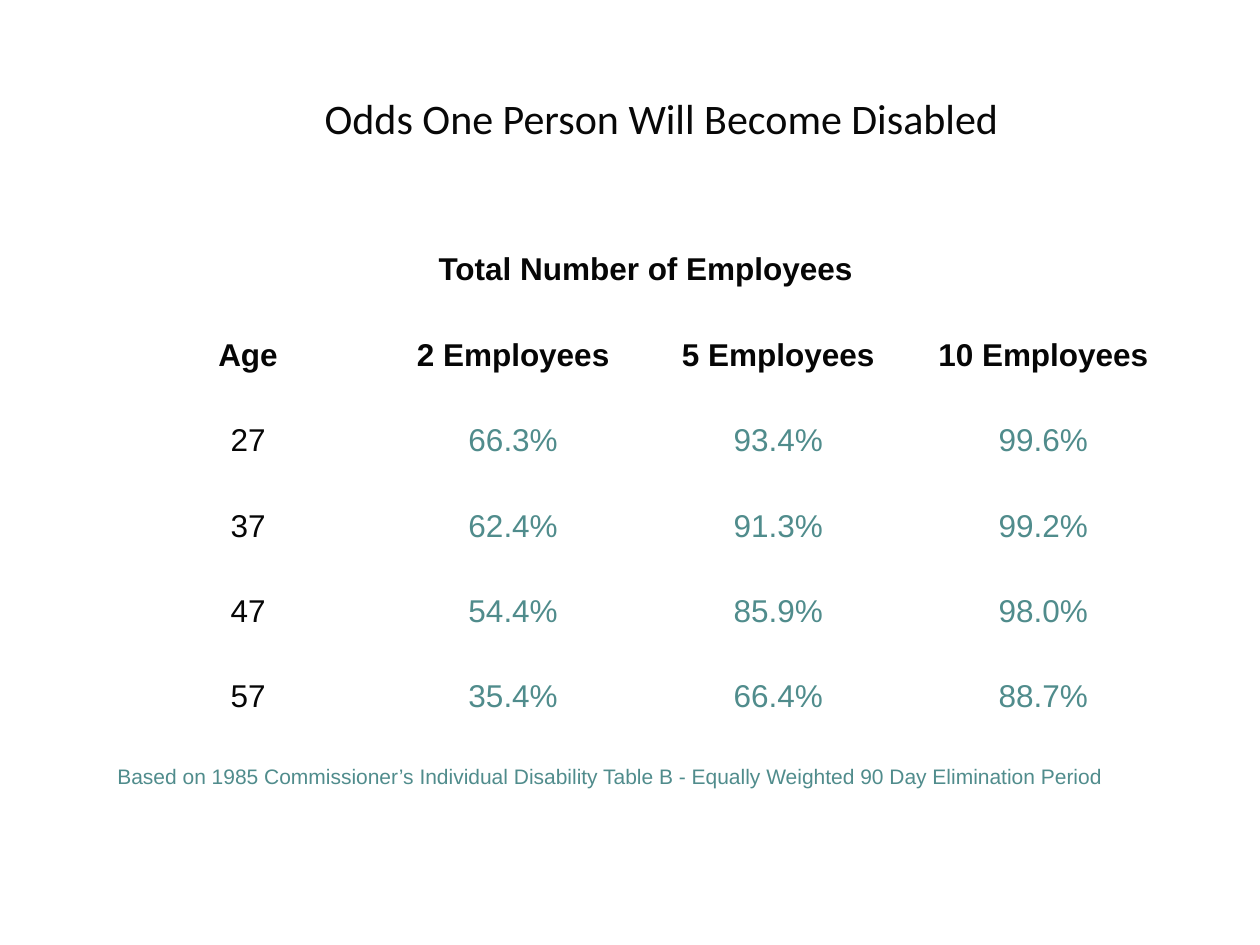
"""Build a slide tabulating the odds that one employee becomes disabled."""
from dataclasses import dataclass

from pptx import Presentation
from pptx.dml.color import RGBColor
from pptx.enum.text import MSO_ANCHOR, PP_ALIGN
from pptx.slide import Slide
from pptx.table import _Cell
from pptx.text.text import TextFrame
from pptx.util import Pt

LEFT, CENTER = PP_ALIGN.LEFT, PP_ALIGN.CENTER
TOP, MIDDLE = MSO_ANCHOR.TOP, MSO_ANCHOR.MIDDLE
TITLE_ONLY = 5
TEAL = "508C8C"
INK = "060606"


@dataclass(frozen=True)
class TextStyle:
    size: float
    color: str
    font: str = "Arial"
    bold: bool = False
    alignment: PP_ALIGN = CENTER
    line_spacing: float = 2.0


@dataclass(frozen=True)
class AgeOdds:
    age: str
    odds: tuple[str, ...]


TITLE = TextStyle(24, "080808", font="Calibri", line_spacing=1.0)
HEADER = TextStyle(18, INK, bold=True)
AGE = TextStyle(18, INK)
ODDS = TextStyle(18, TEAL)
NOTE = TextStyle(12, TEAL, alignment=LEFT, line_spacing=1.9)

HEADINGS = ("Age", "2 Employees", "5 Employees", "10 Employees")
AGE_ROWS = (
    AgeOdds("27", ("66.3%", "93.4%", "99.6%")),
    AgeOdds("37", ("62.4%", "91.3%", "99.2%")),
    AgeOdds("47", ("54.4%", "85.9%", "98.0%")),
    AgeOdds("57", ("35.4%", "66.4%", "88.7%")),
)
COLUMN_WIDTH = 151.5
ROW_HEIGHT = 48.75


def rgb(color: str) -> RGBColor:
    return RGBColor.from_string(color)


def write_text(frame: TextFrame, text: str, style: TextStyle) -> None:
    frame.word_wrap = True
    paragraph = frame.paragraphs[0]
    paragraph.text = text
    paragraph.alignment = style.alignment
    paragraph.line_spacing = style.line_spacing
    paragraph.font.size = Pt(style.size)
    paragraph.font.name = style.font
    paragraph.font.bold = style.bold
    paragraph.font.color.rgb = rgb(style.color)


def fill_cell(cell: _Cell, text: str, style: TextStyle,
              anchor: MSO_ANCHOR = MIDDLE) -> None:
    cell.fill.background()
    cell.vertical_anchor = anchor
    write_text(cell.text_frame, text, style)


def add_title(slide: Slide) -> None:
    title = slide.shapes.title
    title.left, title.top = Pt(66), Pt(24)
    title.width, title.height = Pt(624), Pt(86)
    title.text_frame.vertical_anchor = MIDDLE
    write_text(title.text_frame, "Odds One Person Will Become Disabled", TITLE)


def add_odds_table(slide: Slide) -> None:
    row_count, column_count = len(AGE_ROWS) + 2, len(HEADINGS)
    table = slide.shapes.add_table(
        row_count, column_count, Pt(66), Pt(120),
        Pt(COLUMN_WIDTH * column_count), Pt(ROW_HEIGHT * row_count)).table
    table.first_row = table.horz_banding = False
    table.cell(0, 0).merge(table.cell(0, column_count - 1))
    fill_cell(table.cell(0, 0), "Total Number of Employees", HEADER, TOP)
    for column, heading in enumerate(HEADINGS):
        fill_cell(table.cell(1, column), heading, HEADER)
    for row, entry in enumerate(AGE_ROWS, start=2):
        fill_cell(table.cell(row, 0), entry.age, AGE)
        for column, odds in enumerate(entry.odds, start=1):
            fill_cell(table.cell(row, column), odds, ODDS)


def add_note(slide: Slide) -> None:
    note = slide.shapes.add_textbox(Pt(60), Pt(420), Pt(582), Pt(31))
    write_text(
        note.text_frame,
        "Based on 1985 Commissioner’s Individual Disability Table B"
        " - Equally Weighted 90 Day Elimination Period",
        NOTE)


def main() -> None:
    presentation = Presentation()
    presentation.slide_width, presentation.slide_height = Pt(720), Pt(540)
    slide = presentation.slides.add_slide(presentation.slide_layouts[TITLE_ONLY])
    add_title(slide)
    add_odds_table(slide)
    add_note(slide)
    presentation.save("out.pptx")


if __name__ == "__main__":
    main()
